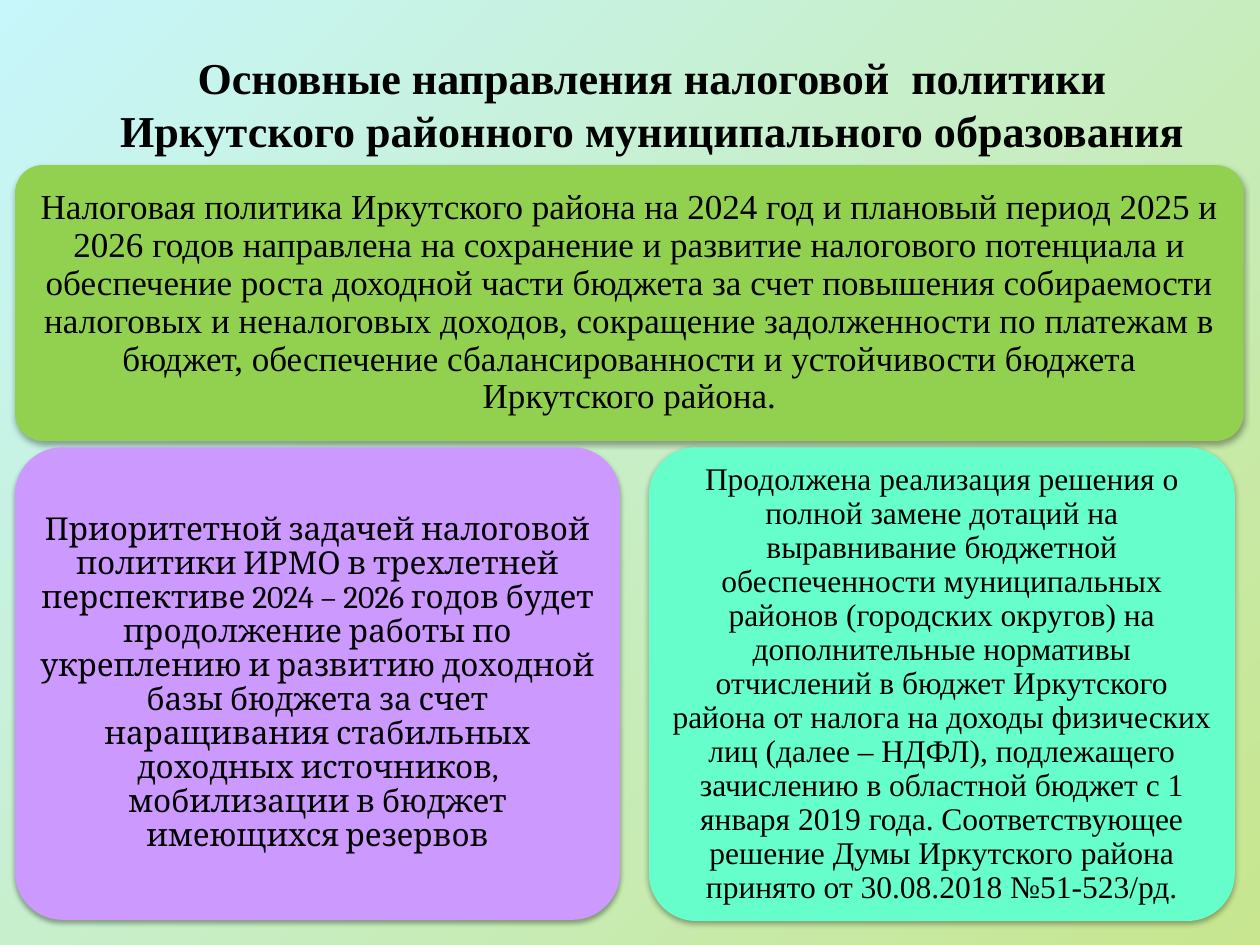
"""Builds the slide on the main directions of the district's tax policy."""
from dataclasses import dataclass

import lxml.etree
import pptx
import pptx.dml.color
import pptx.enum.shapes
import pptx.enum.text
import pptx.oxml.ns
import pptx.util

WIDTH = 10
HEIGHT = 7.5
TITLE_ONLY = 5

TITLE = "Основные направления налоговой  политики Иркутского районного муниципального образования"
POLICY = (
    "Налоговая политика Иркутского района на 2024 год и плановый период 2025 и 2026\u00a0годов "
    "направлена на сохранение и развитие налогового потенциала и обеспечение роста доходной части "
    "бюджета за счет повышения собираемости налоговых и неналоговых доходов, сокращение "
    "задолженности по платежам в бюджет, обеспечение сбалансированности и устойчивости бюджета "
    "Иркутского района."
)
PRIORITY = (
    "Приоритетной задачей налоговой политики ИРМО в трехлетней перспективе 2024 – 2026 годов будет "
    "продолжение работы по укреплению и развитию доходной базы бюджета за счет наращивания "
    "стабильных доходных источников, мобилизации в бюджет имеющихся резервов"
)
SUBSIDY_SWAP = (
    "Продолжена реализация решения о полной замене дотаций на выравнивание бюджетной "
    "обеспеченности муниципальных районов (городских округов) на дополнительные нормативы "
    "отчислений в бюджет Иркутского района от налога на доходы физических лиц (далее – НДФЛ), "
    "подлежащего зачислению в областной бюджет с 1 января 2019 года. Соответствующее решение Думы "
    "Иркутского района принято от 30.08.2018 №51-523/рд."
)


@dataclass(frozen=True)
class Theme:
    """Colours, fonts and type sizes of the slide."""

    sky: str = "C7F6FB"
    meadow: str = "C7E68F"
    green: str = "92D050"
    violet: str = "CC99FF"
    mint: str = "66FFCC"
    text: str = "000000"
    serif: str = "Times New Roman"
    accent_serif: str = "Cambria"
    title_size: float = 25.2
    lead_size: float = 20
    body_size: float = 18


THEME = Theme()


def rgb(value):
    """Return a colour from its hexadecimal form."""
    return pptx.dml.color.RGBColor.from_string(value)


def paint_background(slide):
    """Fill the background with a diagonal gradient."""
    fill = slide.background.fill
    fill.gradient()
    fill.gradient_angle = 315
    for stop, colour in zip(fill.gradient_stops, (THEME.sky, THEME.meadow)):
        stop.color.rgb = rgb(colour)


def write(frame, wording, font, size, anchor, bold=False):
    """Write one centred paragraph into a text frame."""
    frame.text = wording
    frame.word_wrap = True
    frame.auto_size = pptx.enum.text.MSO_AUTO_SIZE.NONE
    frame.vertical_anchor = anchor
    paragraph = frame.paragraphs[0]
    paragraph.alignment = pptx.enum.text.PP_ALIGN.CENTER
    paragraph.font.name = font
    paragraph.font.size = pptx.util.Pt(size)
    paragraph.font.bold = bold
    paragraph.font.color.rgb = rgb(THEME.text)
    return paragraph


def add_title(slide):
    """Place and format the title placeholder."""
    title = slide.shapes.title
    title.left, title.top, title.width, title.height = map(
        pptx.util.Inches, (0.75, 0.21, 8.85, 1.08)
    )
    write(title.text_frame, TITLE, THEME.serif, THEME.title_size,
          pptx.enum.text.MSO_ANCHOR.BOTTOM, bold=True)


def add_soft_shadow(card):
    """Give a card a soft shadow below it."""
    card.shadow.inherit = False
    tag = pptx.oxml.ns.qn
    effects = card._element.spPr.find(tag("a:effectLst"))
    shadow = lxml.etree.SubElement(
        effects, tag("a:outerShdw"), blurRad=str(pptx.util.Pt(3.1)),
        dist=str(pptx.util.Pt(1.8)), dir="5400000", rotWithShape="0",
    )
    colour = lxml.etree.SubElement(shadow, tag("a:srgbClr"), val="000000")
    lxml.etree.SubElement(colour, tag("a:alpha"), val="35000")


def add_card(slide, box, colour, wording, font, size, inset):
    """Add a rounded card with centred wording."""
    card = slide.shapes.add_shape(
        pptx.enum.shapes.MSO_SHAPE.ROUNDED_RECTANGLE, *map(pptx.util.Inches, box)
    )
    card.adjustments[0] = 0.1
    card.fill.solid()
    card.fill.fore_color.rgb = rgb(colour)
    card.line.fill.background()
    add_soft_shadow(card)
    frame = card.text_frame
    frame.margin_left = frame.margin_right = pptx.util.Inches(inset)
    frame.margin_top = frame.margin_bottom = pptx.util.Inches(inset)
    paragraph = write(frame, wording, font, size, pptx.enum.text.MSO_ANCHOR.MIDDLE)
    paragraph.line_spacing = 0.9


def main():
    """Build and save the slide."""
    deck = pptx.Presentation()
    deck.slide_width = pptx.util.Inches(WIDTH)
    deck.slide_height = pptx.util.Inches(HEIGHT)
    slide = deck.slides.add_slide(deck.slide_layouts[TITLE_ONLY])
    paint_background(slide)
    add_title(slide)

    left, lower_row = 0.12, 3.55
    add_card(slide, (left, 1.31, 9.75, 2.19), THEME.green, POLICY,
             THEME.serif, THEME.lead_size, 0.08)
    add_card(slide, (left, lower_row, 4.8, 3.75), THEME.violet, PRIORITY,
             THEME.accent_serif, THEME.body_size, 0.07)
    add_card(slide, (5.15, lower_row, 4.65, 3.76), THEME.mint, SUBSIDY_SWAP,
             THEME.serif, THEME.body_size, 0.07)
    deck.save("out.pptx")


if __name__ == "__main__":
    main()
